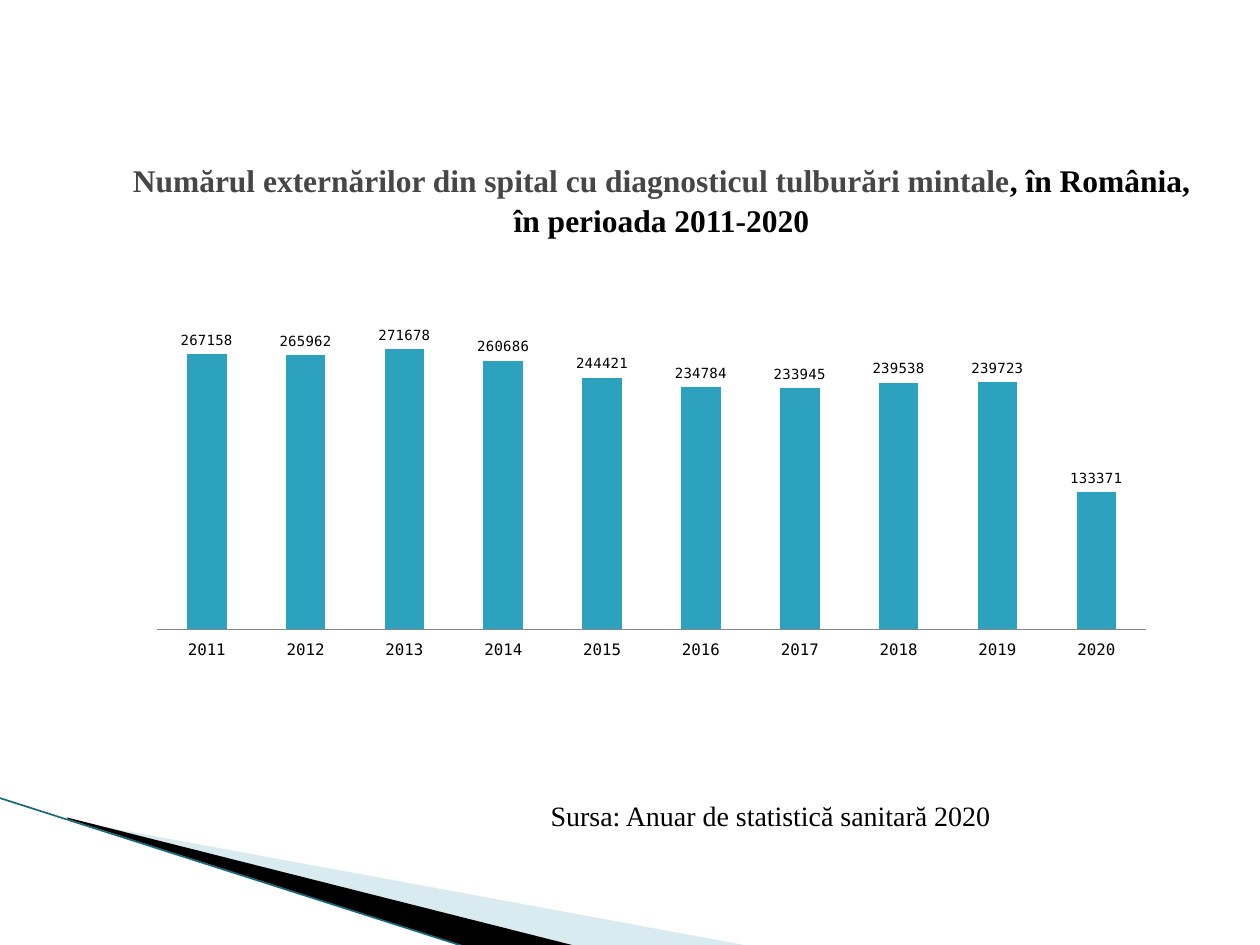
"""Build the slide on hospital discharges for mental disorders in Romania."""
from dataclasses import dataclass

from lxml import etree
from pptx import Presentation
from pptx.chart.data import CategoryChartData
from pptx.dml.color import RGBColor
from pptx.enum.chart import XL_CHART_TYPE, XL_LABEL_POSITION, XL_TICK_LABEL_POSITION, XL_TICK_MARK
from pptx.enum.shapes import MSO_CONNECTOR
from pptx.enum.text import MSO_ANCHOR, PP_ALIGN
from pptx.oxml.ns import qn
from pptx.slide import Slide
from pptx.util import Cm, Pt

COLUMN_CLUSTERED = XL_CHART_TYPE.COLUMN_CLUSTERED
OUTSIDE_END = XL_LABEL_POSITION.OUTSIDE_END
LABELS_LOW = XL_TICK_LABEL_POSITION.LOW
NO_TICK = XL_TICK_MARK.NONE
STRAIGHT = MSO_CONNECTOR.STRAIGHT
MIDDLE, BOTTOM = MSO_ANCHOR.MIDDLE, MSO_ANCHOR.BOTTOM
CENTER = PP_ALIGN.CENTER


@dataclass(frozen=True)
class Theme:
    black: RGBColor = RGBColor.from_string("000000")
    gray: RGBColor = RGBColor.from_string("464646")
    axis: RGBColor = RGBColor.from_string("878787")
    bar: RGBColor = RGBColor.from_string("2DA2BF")
    pale: RGBColor = RGBColor.from_string("A0CBDC")
    edge: RGBColor = RGBColor.from_string("17697C")
    text_font: str = "Times New Roman"
    chart_font: str = "DejaVu Sans Mono"
    title_size: Pt = Pt(18)
    source_size: Pt = Pt(16)
    chart_size: Pt = Pt(10)
    category_size: Pt = Pt(9)
    label_size: Pt = Pt(8)


@dataclass(frozen=True)
class Wedge:
    points: tuple[tuple[float, float], ...]
    color: RGBColor
    opacity: int = 100


THEME = Theme()
WEDGES = (
    Wedge(((1.4, 16.54), (15.11, 19.07), (11.58, 19.07), (1.4, 16.51)), THEME.pale, 40),
    Wedge(((1.35, 16.48), (11.61, 19.07), (9.45, 19.1), (1.37, 16.51)), THEME.black),
)
TITLE_LINES = (
    (("Numărul externărilor din spital cu diagnosticul tulburări mintale", THEME.gray),
     (", în România,", THEME.black)),
    (("în perioada 2011-2020", THEME.black),),
)
FIRST_YEAR = 2011
DISCHARGES = (267158, 265962, 271678, 260686, 244421, 234784, 233945, 239538, 239723, 133371)
PLOT_LAYOUT = {
    "layoutTarget": "inner", "xMode": "edge", "yMode": "edge",
    "x": "0.06", "y": "0.09", "w": "0.94", "h": "0.61",
}


def draw_wedge(slide: Slide, wedge: Wedge) -> None:
    """Draw one corner wedge with its opacity."""
    first, *others = [(Cm(x), Cm(y)) for x, y in wedge.points]
    builder = slide.shapes.build_freeform(*first)
    builder.add_line_segments(others, close=True)
    shape = builder.convert_to_shape()
    shape.shadow.inherit = False
    shape.line.fill.background()
    shape.fill.solid()
    shape.fill.fore_color.rgb = wedge.color
    if wedge.opacity < 100:
        color = shape.fill._xPr.find(f".//{qn('a:srgbClr')}")
        etree.SubElement(color, qn("a:alpha"), val=str(wedge.opacity * 1000))


def draw_edge(slide: Slide) -> None:
    """Draw the thin line along the corner wedges."""
    line = slide.shapes.add_connector(STRAIGHT, Cm(-0.03), Cm(16.08), Cm(9.42), Cm(19.1))
    line.line.color.rgb = THEME.edge
    line.line.width = Pt(0.95)
    etree.SubElement(line._element.spPr, qn("a:effectLst"))


def write_title(slide: Slide) -> None:
    """Fill and format the two-line title."""
    title = slide.shapes.title
    title.left, title.top, title.width, title.height = Cm(1.27), Cm(2.51), Cm(24.13), Cm(3)
    title.text_frame.vertical_anchor = MIDDLE
    paragraph = title.text_frame.paragraphs[0]
    paragraph.alignment = CENTER
    paragraph.line_spacing = 1.05
    for index, line in enumerate(TITLE_LINES):
        if index:
            paragraph.add_line_break()
        for text, color in line:
            run = paragraph.add_run()
            run.text = text
            run.font.name = THEME.text_font
            run.font.size = THEME.title_size
            run.font.bold = True
            run.font.color.rgb = color


def write_source(slide: Slide) -> None:
    """Write the data source below the chart."""
    box = slide.shapes.add_textbox(Cm(8.51), Cm(12.22), Cm(12.8), Cm(5.46))
    frame = box.text_frame
    frame.word_wrap = True
    frame.vertical_anchor = BOTTOM
    frame.margin_left = Cm(1.5)
    frame.margin_bottom = Cm(0.9)
    frame.text = "Sursa: Anuar de statistică sanitară 2020"
    paragraph = frame.paragraphs[0]
    paragraph.alignment = CENTER
    font = paragraph.runs[0].font
    font.name, font.size = THEME.text_font, THEME.source_size
    font.color.rgb = THEME.black


def add_discharge_chart(slide: Slide) -> None:
    """Add the column chart of yearly discharges."""
    data = CategoryChartData()
    data.categories = [str(FIRST_YEAR + offset) for offset in range(len(DISCHARGES))]
    data.add_series("Series 1", DISCHARGES)
    chart = slide.shapes.add_chart(
        COLUMN_CLUSTERED, Cm(1.9), Cm(5.54), Cm(21.21), Cm(10.21), data).chart
    chart.has_title = chart.has_legend = False
    chart.font.name, chart.font.size = THEME.chart_font, THEME.chart_size
    chart.font.color.rgb = THEME.black

    value_axis = chart.value_axis
    value_axis.minimum_scale, value_axis.maximum_scale = 0, 300000
    value_axis.has_major_gridlines = False
    value_axis.visible = False

    category_axis = chart.category_axis
    category_axis.major_tick_mark = category_axis.minor_tick_mark = NO_TICK
    category_axis.tick_label_position = LABELS_LOW
    category_axis.tick_labels.font.size = THEME.category_size
    category_axis.format.line.color.rgb = THEME.axis

    plot = chart.plots[0]
    plot.gap_width = 150
    plot.vary_by_categories = False
    fill = plot.series[0].format.fill
    fill.solid()
    fill.fore_color.rgb = THEME.bar
    plot.has_data_labels = True
    labels = plot.data_labels
    labels.show_value = True
    labels.position = OUTSIDE_END
    labels.font.size = THEME.label_size

    plot_area = chart._chartSpace.find(f".//{qn('c:plotArea')}")
    for layout in plot_area.findall(qn("c:layout")):
        plot_area.remove(layout)
    layout = etree.Element(qn("c:layout"))
    manual = etree.SubElement(layout, qn("c:manualLayout"))
    for name, value in PLOT_LAYOUT.items():
        etree.SubElement(manual, qn(f"c:{name}"), val=value)
    plot_area.insert(0, layout)


def main() -> None:
    """Build and save the presentation."""
    presentation = Presentation()
    presentation.slide_width, presentation.slide_height = Cm(25.4), Cm(19.05)
    slide = presentation.slides.add_slide(presentation.slide_layouts[5])
    for wedge in WEDGES:
        draw_wedge(slide, wedge)
    draw_edge(slide)
    write_title(slide)
    write_source(slide)
    add_discharge_chart(slide)
    presentation.save("out.pptx")


if __name__ == "__main__":
    main()
